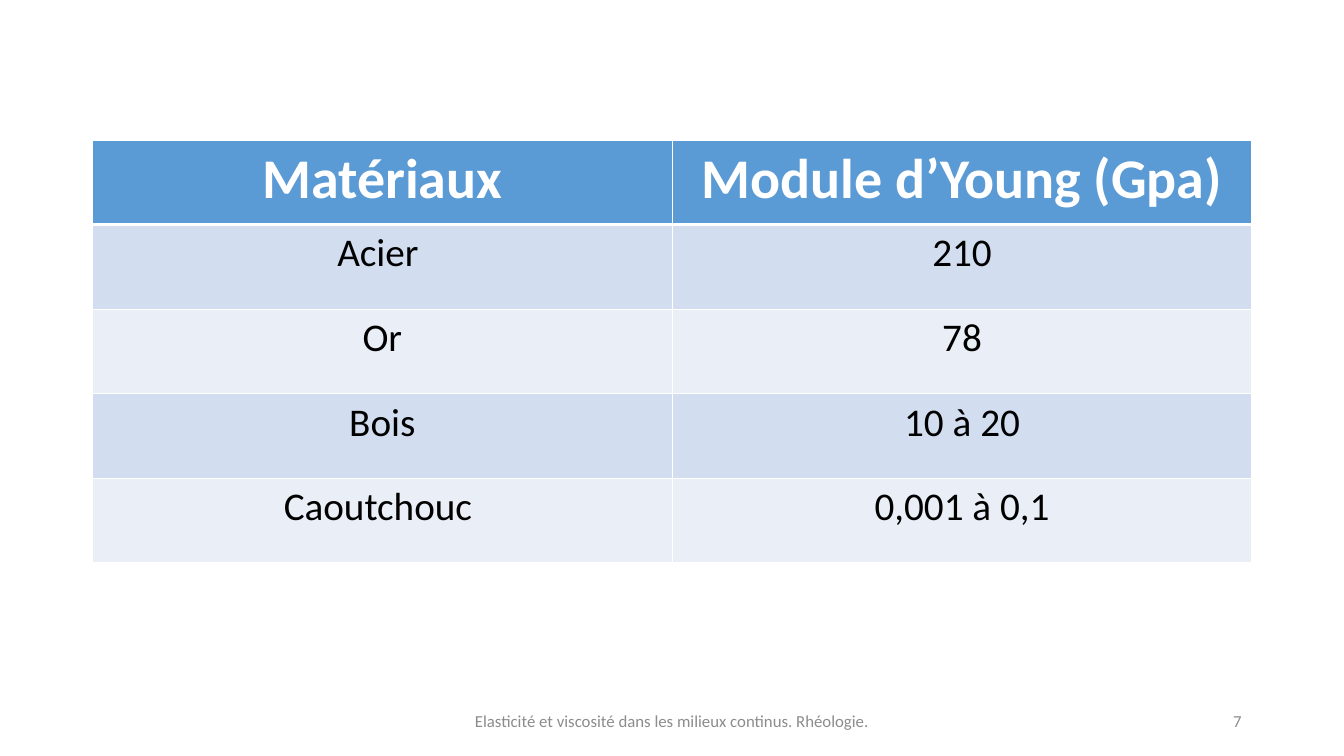
from lxml import etree
from pptx import Presentation
from pptx.dml.color import RGBColor
from pptx.enum.text import MSO_ANCHOR, PP_ALIGN
from pptx.oxml.ns import qn
from pptx.util import Cm, Pt

CENTER, RIGHT = PP_ALIGN.CENTER, PP_ALIGN.RIGHT
MIDDLE = MSO_ANCHOR.MIDDLE

FONT = "Calibri"
WHITE = RGBColor(0xFF, 0xFF, 0xFF)
BLACK = RGBColor(0x00, 0x00, 0x00)
GREY = RGBColor(0x8C, 0x8C, 0x8C)
HEADER_BLUE = RGBColor(0x5B, 0x9B, 0xD5)
BANDS = (RGBColor(0xD2, 0xDE, 0xEF), RGBColor(0xEA, 0xEF, 0xF7))

MODULI = [
    ("Matériaux", "Module d’Young (Gpa)"),
    ("Acier ", "210"),
    ("Or", "78"),
    ("Bois", "10 à 20"),
    ("Caoutchouc ", "0,001 à 0,1"),
]
COLUMN_WIDTH, ROW_HEIGHT = Cm(14.61), Cm(2.13)
FOOTER_TOP, FOOTER_HEIGHT = Cm(17.65), Cm(1.01)


def write(frame, text, size, color, align, bold=False):
    paragraph = frame.paragraphs[0]
    paragraph.alignment = align
    run = paragraph.add_run()
    run.text = text
    run.font.name = FONT
    run.font.size = Pt(size)
    run.font.bold = bold
    run.font.color.rgb = color


def set_borders(cell, top, bottom):
    """Draw white cell borders; top and bottom widths are in points."""
    properties = cell._tc.get_or_add_tcPr()
    sides = (("a:lnL", 1), ("a:lnR", 1), ("a:lnT", top), ("a:lnB", bottom))
    for position, (side, width) in enumerate(sides):
        line = etree.Element(qn(side), w=str(Pt(width)))
        fill = etree.SubElement(line, qn("a:solidFill"))
        etree.SubElement(fill, qn("a:srgbClr"), val=str(WHITE))
        properties.insert(position, line)


def add_moduli_table(slide, left, top):
    rows, columns = len(MODULI), len(MODULI[0])
    table = slide.shapes.add_table(
        rows, columns, left, top, COLUMN_WIDTH * columns, ROW_HEIGHT * rows
    ).table
    for column in table.columns:
        column.width = COLUMN_WIDTH
    for r, values in enumerate(MODULI):
        table.rows[r].height = ROW_HEIGHT
        header = r == 0
        for c, value in enumerate(values):
            cell = table.cell(r, c)
            cell.fill.solid()
            cell.fill.fore_color.rgb = HEADER_BLUE if header else BANDS[(r - 1) % 2]
            # The rule under the header is thicker than the others
            set_borders(cell, top=3 if r == 1 else 1, bottom=3 if header else 1)
            write(cell.text_frame, value, 40 if header else 28,
                  WHITE if header else BLACK, CENTER, bold=header)


def add_footer_text(slide, text, left, width, align):
    frame = slide.shapes.add_textbox(left, FOOTER_TOP, width, FOOTER_HEIGHT).text_frame
    frame.word_wrap = True
    frame.vertical_anchor = MIDDLE
    write(frame, text, 12, GREY, align)


def main():
    presentation = Presentation()
    presentation.slide_width, presentation.slide_height = Cm(33.87), Cm(19.05)
    slide = presentation.slides.add_slide(presentation.slide_layouts[6])

    # Young's modulus by material
    add_moduli_table(slide, Cm(2.33), Cm(3.53))

    # Footer and page number
    add_footer_text(slide, "Elasticité et viscosité dans les milieux continus. Rhéologie.",
                    Cm(11.22), Cm(11.43), CENTER)
    add_footer_text(slide, "7", Cm(23.92), Cm(7.62), RIGHT)

    presentation.save("out.pptx")


if __name__ == "__main__":
    main()
